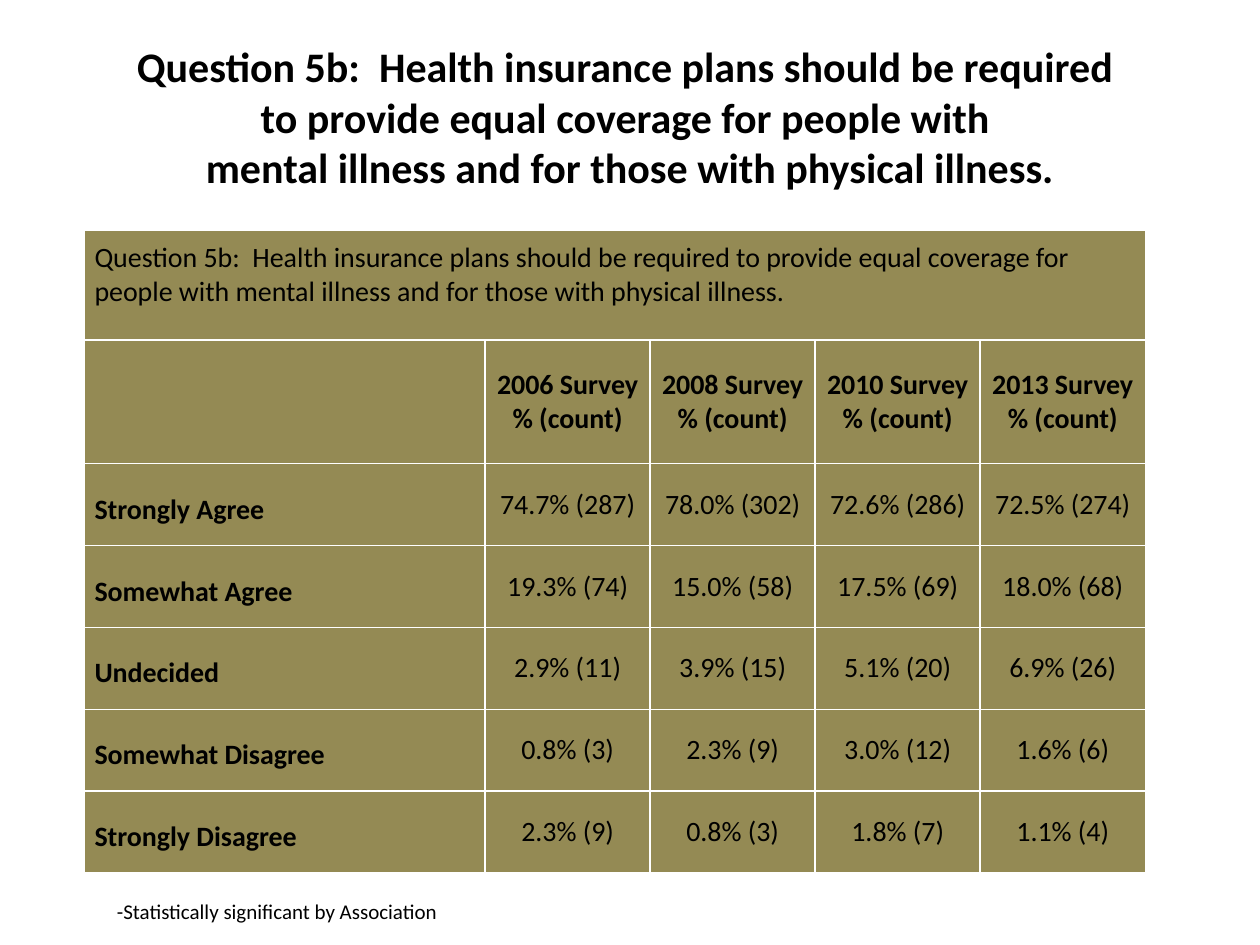
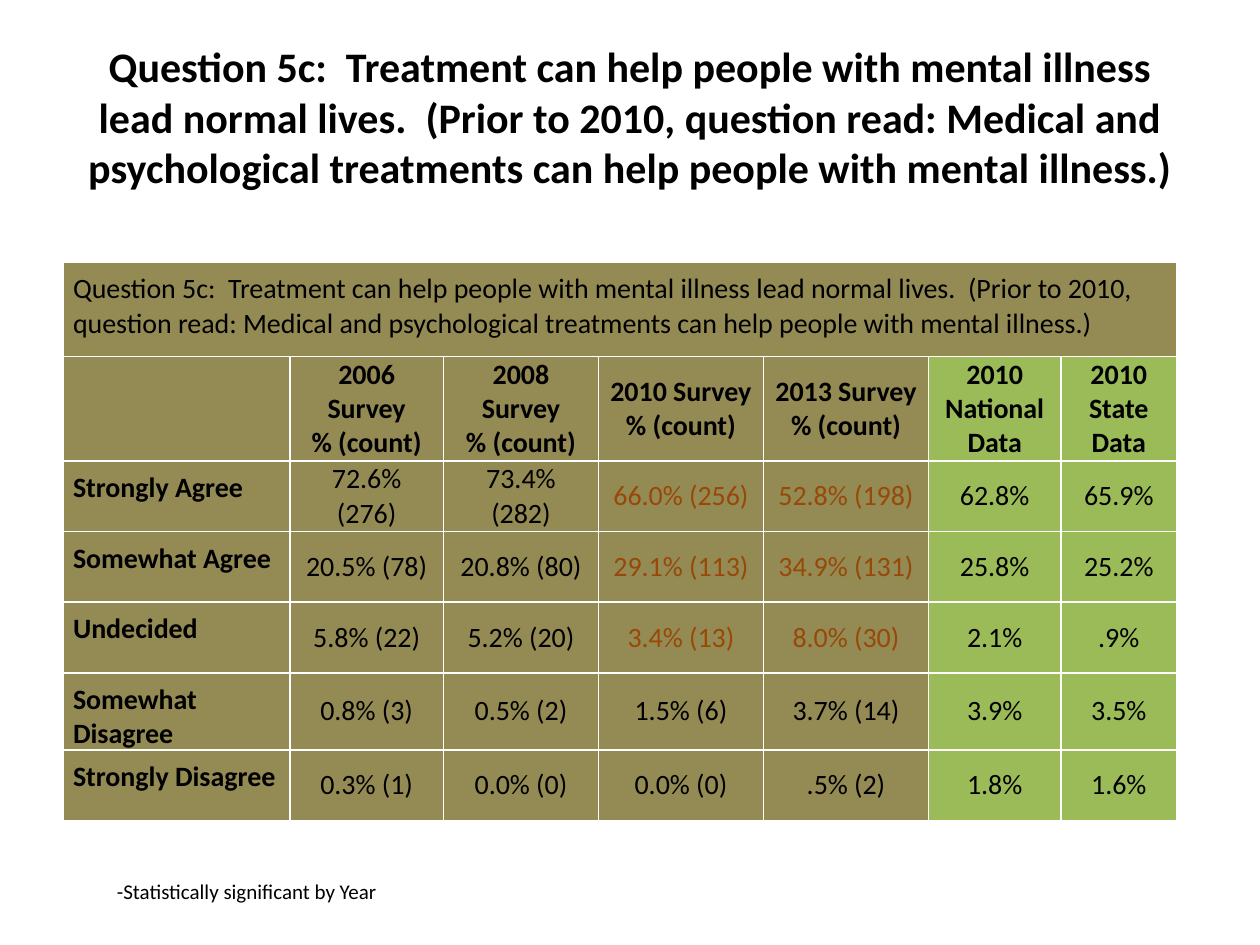
from lxml import etree
from pptx import Presentation
from pptx.dml.color import RGBColor
from pptx.enum.text import MSO_ANCHOR, PP_ALIGN
from pptx.oxml.ns import qn
from pptx.util import Inches, Pt

OLIVE = RGBColor(0x94, 0x8A, 0x54)
GREEN = RGBColor(0x9B, 0xBB, 0x59)
RUST = RGBColor(0x98, 0x48, 0x07)
BLACK = RGBColor(0, 0, 0)
WHITE = RGBColor(0xFF, 0xFF, 0xFF)
FONT = "Calibri"
LEFT, CENTER = PP_ALIGN.LEFT, PP_ALIGN.CENTER
TOP, MIDDLE = MSO_ANCHOR.TOP, MSO_ANCHOR.MIDDLE
LABEL_DROP = 0.08  # inset above the question and the answer labels

ANSWERS = ["Strongly Agree", "Somewhat Agree", "Undecided",
           "Somewhat Disagree", "Strongly Disagree"]
SURVEYS = [f"{year} Survey\n% (count)" for year in (2006, 2008, 2010, 2013)]
BENCHMARKS = ["2010 National\nData", "2010 State\nData"]

COVERAGE = {
    "title": "Question 5b:  Health insurance plans should be required \v"
             "to provide equal coverage for people with \v"
             "mental illness and for those with physical illness.",
    "table_box": (0.67, 1.83),
    "columns": [3.18] + [1.31] * 4,
    "rows": [0.87, 0.98] + [0.65] * 5,
    "label_anchor": MIDDLE,
    "headers": SURVEYS,
    "results": [
        ["74.7% (287)", "78.0% (302)", "72.6% (286)", "72.5% (274)"],
        ["19.3% (74)", "15.0% (58)", "17.5% (69)", "18.0% (68)"],
        ["2.9% (11)", "3.9% (15)", "5.1% (20)", "6.9% (26)"],
        ["0.8% (3)", "2.3% (9)", "3.0% (12)", "1.6% (6)"],
        ["2.3% (9)", "0.8% (3)", "1.8% (7)", "1.1% (4)"],
    ],
    "significant": set(),
    "note": "-Statistically significant by Association",
    "note_top": 7.08,
}
TREATMENT = {
    "title": "Question 5c:  Treatment can help people with mental illness lead "
             "normal lives.  (Prior to 2010, question read: Medical and "
             "psychological treatments can help people with mental illness.)",
    "table_box": (0.5, 2.08),
    "columns": [1.8, 1.22, 1.23, 1.31, 1.31, 1.05, 0.92],
    "rows": [0.75, 0.83] + [0.56] * 5,
    "label_anchor": TOP,
    "headers": SURVEYS + BENCHMARKS,
    "results": [
        ["72.6% (276)", "73.4% (282)", "66.0% (256)", "52.8% (198)", "62.8%", "65.9%"],
        ["20.5% (78)", "20.8% (80)", "29.1% (113)", "34.9% (131)", "25.8%", "25.2%"],
        ["5.8% (22)", "5.2% (20)", "3.4% (13)", "8.0% (30)", "2.1%", ".9%"],
        ["0.8% (3)", "0.5% (2)", "1.5% (6)", "3.7% (14)", "3.9%", "3.5%"],
        ["0.3% (1)", "0.0% (0)", "0.0% (0)", ".5% (2)", "1.8%", "1.6%"],
    ],
    # (answer, survey) positions printed in the highlight colour
    "significant": {(answer, survey) for answer in range(3) for survey in (2, 3)},
    "note": "-Statistically significant by Year",
    "note_top": 6.92,
}


def write(frame, text, size, bold=False, color=BLACK, align=LEFT):
    frame.text = text
    for paragraph in frame.paragraphs:
        paragraph.alignment = align
        for run in paragraph.runs:
            font = run.font
            font.name, font.size, font.bold = FONT, Pt(size), bold
            font.color.rgb = color


def add_text(slide, box, text, size, anchor=TOP, **style):
    frame = slide.shapes.add_textbox(*map(Inches, box)).text_frame
    frame.word_wrap = True
    frame.vertical_anchor = anchor
    write(frame, text, size, **style)


def add_borders(cell):
    properties = cell._tc.get_or_add_tcPr()
    for position, side in enumerate(("lnL", "lnR", "lnT", "lnB")):
        line = etree.Element(qn(f"a:{side}"), w=str(Pt(1)))
        fill = etree.SubElement(line, qn("a:solidFill"))
        etree.SubElement(fill, qn("a:srgbClr"), val=str(WHITE))
        properties.insert(position, line)


def fill_cell(cell, text, anchor=MIDDLE, drop=0, **style):
    cell.margin_left = cell.margin_right = Inches(0.08)
    cell.margin_top, cell.margin_bottom = Inches(drop), 0
    cell.vertical_anchor = anchor
    write(cell.text_frame, text, 16, **style)


def add_results_table(slide, survey):
    columns, rows = survey["columns"], survey["rows"]
    box = (*survey["table_box"], sum(columns), sum(rows))
    table = slide.shapes.add_table(
        len(rows), len(columns), *map(Inches, box)).table
    table.first_row = table.horz_banding = False
    for column, width in zip(table.columns, columns):
        column.width = Inches(width)
    for row, height in zip(table.rows, rows):
        row.height = Inches(height)

    for r in range(len(rows)):
        for c in range(len(columns)):
            cell = table.cell(r, c)
            cell.fill.solid()
            is_benchmark = r > 0 and c > len(SURVEYS)
            cell.fill.fore_color.rgb = GREEN if is_benchmark else OLIVE
            add_borders(cell)

    question = table.cell(0, 0)
    question.merge(table.cell(0, len(columns) - 1))
    fill_cell(question, survey["title"].replace("\v", ""), TOP, LABEL_DROP)
    for c, header in enumerate(survey["headers"], 1):
        fill_cell(table.cell(1, c), header, bold=True, align=CENTER)
    for a, (answer, results) in enumerate(zip(ANSWERS, survey["results"])):
        fill_cell(table.cell(a + 2, 0), answer, survey["label_anchor"],
                  LABEL_DROP, bold=True)
        for s, result in enumerate(results):
            color = RUST if (a, s) in survey["significant"] else BLACK
            fill_cell(table.cell(a + 2, s + 1), result, color=color, align=CENTER)


def add_question_slide(deck, survey):
    slide = deck.slides.add_slide(deck.slide_layouts[6])
    add_text(slide, (0.5, 0.3, 9, 1.25), survey["title"], 24, MIDDLE,
             bold=True, align=CENTER)
    add_results_table(slide, survey)
    add_text(slide, (0.83, survey["note_top"], 3.5, 0.3), survey["note"], 12)


def main():
    deck = Presentation()
    deck.slide_width, deck.slide_height = Inches(10), Inches(7.5)
    for survey in (COVERAGE, TREATMENT):
        add_question_slide(deck, survey)
    deck.save("out.pptx")


if __name__ == "__main__":
    main()
